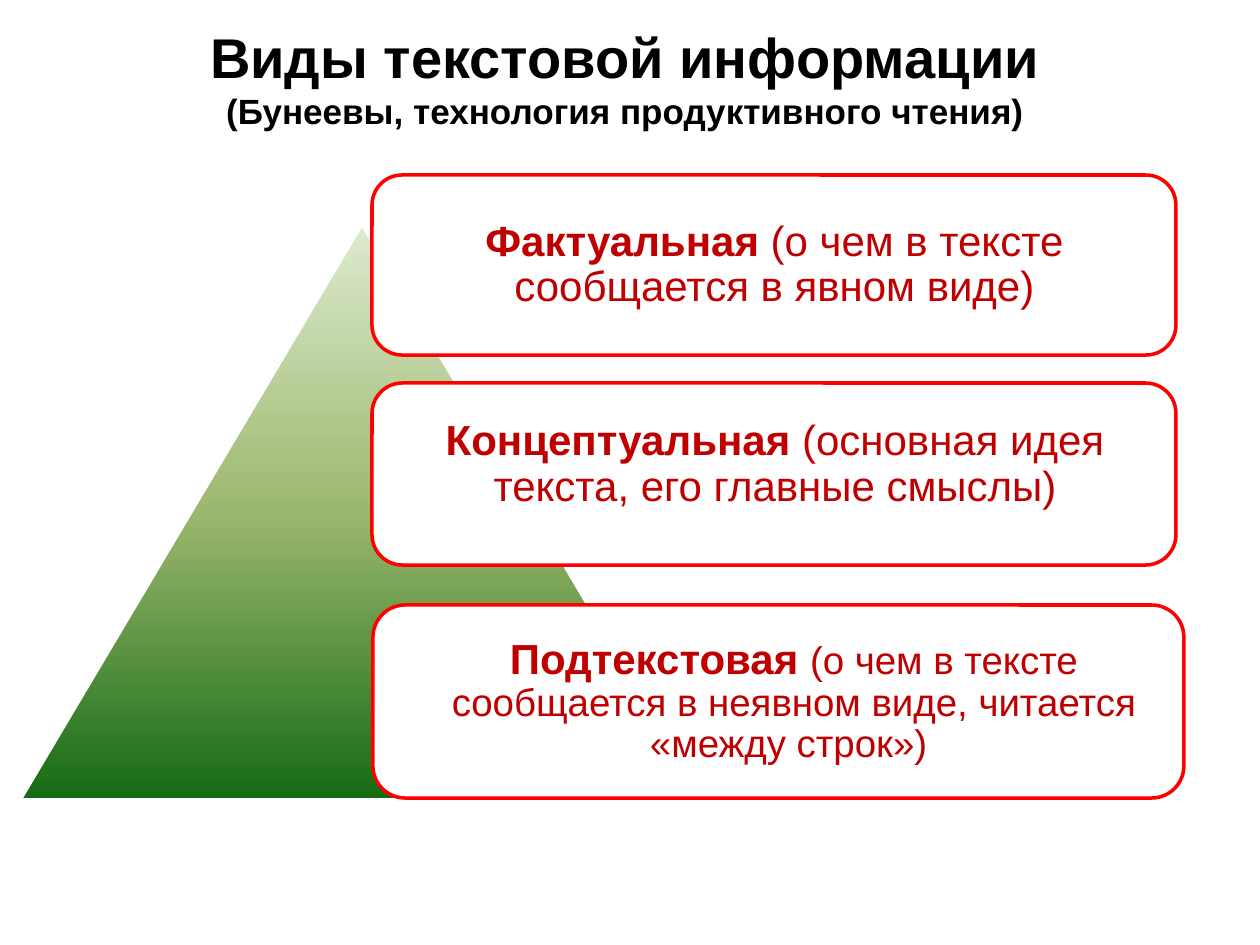
from copy import deepcopy

from pptx import Presentation
from pptx.dml.color import RGBColor
from pptx.enum.shapes import MSO_SHAPE
from pptx.enum.text import MSO_ANCHOR, PP_ALIGN
from pptx.oxml.ns import qn
from pptx.util import Emu, Pt

PX = 914400 // 126
FONT = "Arial"
BLACK, WHITE, RED, DARK_RED = "000000", "FFFFFF", "FF0000", "C00000"
GRADIENT = [(0, "DDEBCF"), (0.5, "9CB86E"), (1, "156B13")]
TITLE_LINES = [
    ("Виды текстовой информации", 32),
    ("(Бунеевы, технология продуктивного чтения)", 20),
]
KINDS = [
    ((372, 175, 804, 180), (386, 184, 777, 163),
     "Фактуальная", " (о чем в тексте сообщается в явном виде)", 24),
    ((372, 383, 804, 182), (387, 383, 776, 164),
     "Концептуальная ", "(основная идея текста, его главные смыслы)", 24),
    ((373, 605, 811, 193), (403, 615, 782, 174),
     "Подтекстовая ",
     "(о чем в тексте сообщается в неявном виде, читается «между строк») ", 22),
]


def color(value):
    """Turn a hex string into a colour."""
    return RGBColor.from_string(value)


def place(box):
    """Turn a box in px into EMU lengths."""
    return [Emu(length * PX) for length in box]


def add_outlined(slide, preset, box, outline):
    """Add a preset shape without shadow and with a 2 pt outline."""
    outlined = slide.shapes.add_shape(preset, *place(box))
    outlined.shadow.inherit = False
    outlined.line.color.rgb = color(outline)
    outlined.line.width = Pt(2)
    return outlined


def add_pyramid(slide):
    """Add the triangle with its light-to-dark green gradient."""
    pyramid = add_outlined(slide, MSO_SHAPE.ISOSCELES_TRIANGLE, (20, 224, 684, 576), WHITE)
    pyramid.fill.gradient()
    pyramid.fill.gradient_angle = 270
    stop_list = pyramid._element.spPr.find(qn("a:gradFill")).find(qn("a:gsLst"))
    stop_list.insert(1, deepcopy(stop_list[0]))
    for stop, (position, shade) in zip(pyramid.fill.gradient_stops, GRADIENT):
        stop.position = position
        stop.color.rgb = color(shade)


def format_run(run, size, shade, bold):
    """Set the font of one run."""
    run.font.name = FONT
    run.font.size = Pt(size)
    run.font.bold = bold
    run.font.color.rgb = color(shade)


def add_kind(slide, card_box, text_box, term, meaning, meaning_size):
    """Add a rounded card with a bold term and its meaning."""
    card = add_outlined(slide, MSO_SHAPE.ROUNDED_RECTANGLE, card_box, RED)
    card.fill.solid()
    card.fill.fore_color.rgb = color(WHITE)
    frame = slide.shapes.add_textbox(*place(text_box)).text_frame
    frame.word_wrap = True
    frame.vertical_anchor = MSO_ANCHOR.MIDDLE
    frame.margin_top = frame.margin_bottom = Emu(13 * PX)
    definition = frame.paragraphs[0]
    definition.alignment = PP_ALIGN.CENTER
    definition.line_spacing = 0.9
    for text, size, bold in ((term, 24, True), (meaning, meaning_size, False)):
        run = definition.add_run()
        run.text = text
        format_run(run, size, DARK_RED, bold)


def add_title(slide):
    """Add the centred two-line title."""
    frame = slide.shapes.add_textbox(*place((172, 16, 906, 123))).text_frame
    frame.word_wrap = True
    frame.text = "\n".join(text for text, _ in TITLE_LINES)
    for paragraph, (_, size) in zip(frame.paragraphs, TITLE_LINES):
        paragraph.alignment = PP_ALIGN.CENTER
        format_run(paragraph.runs[0], size, BLACK, True)


def main():
    """Build and save the slide."""
    presentation = Presentation()
    presentation.slide_width = Emu(1260 * PX)
    presentation.slide_height = Emu(945 * PX)
    slide = presentation.slides.add_slide(presentation.slide_layouts[6])
    add_pyramid(slide)
    for kind in KINDS:
        add_kind(slide, *kind)
    add_title(slide)
    presentation.save("out.pptx")


if __name__ == "__main__":
    main()
